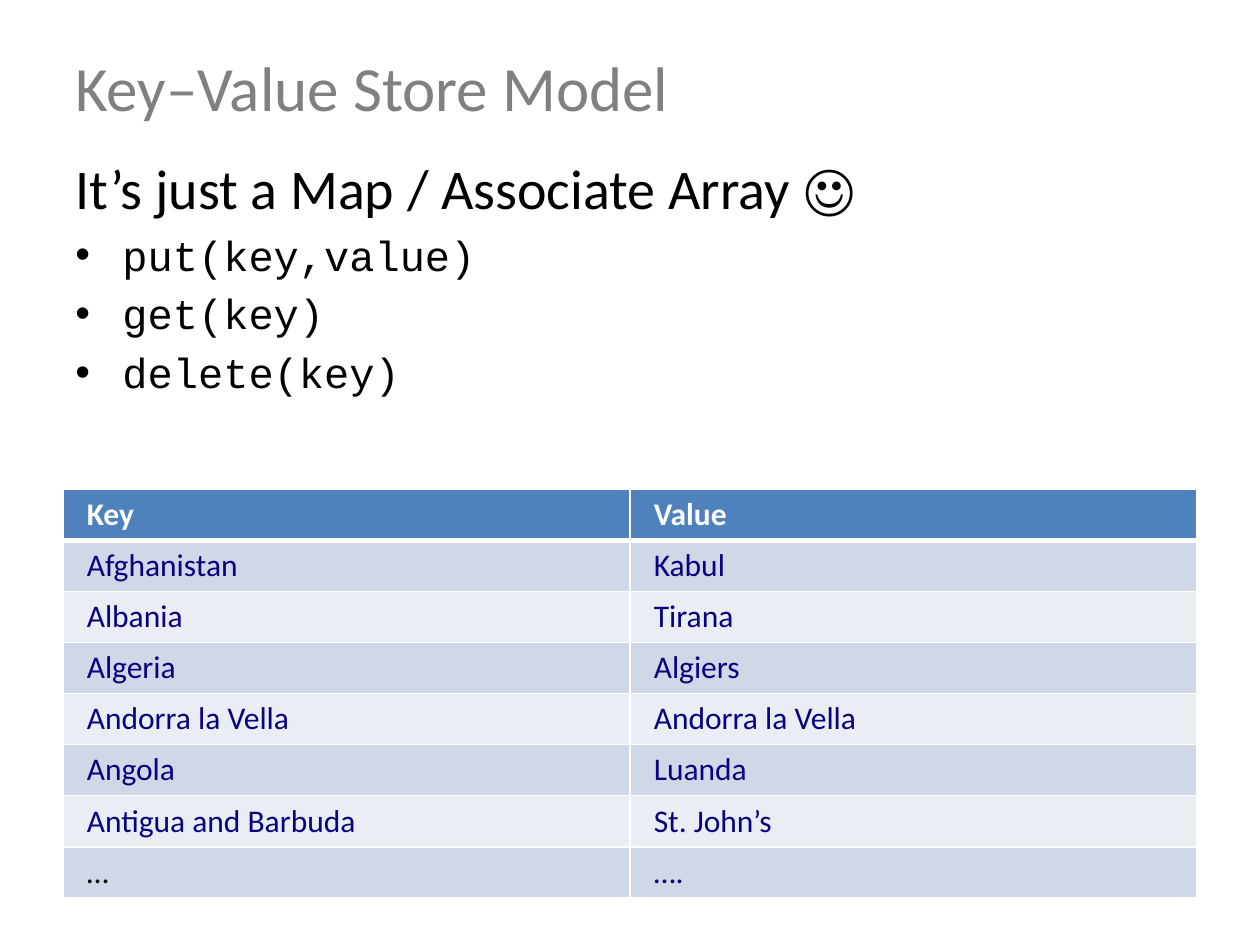
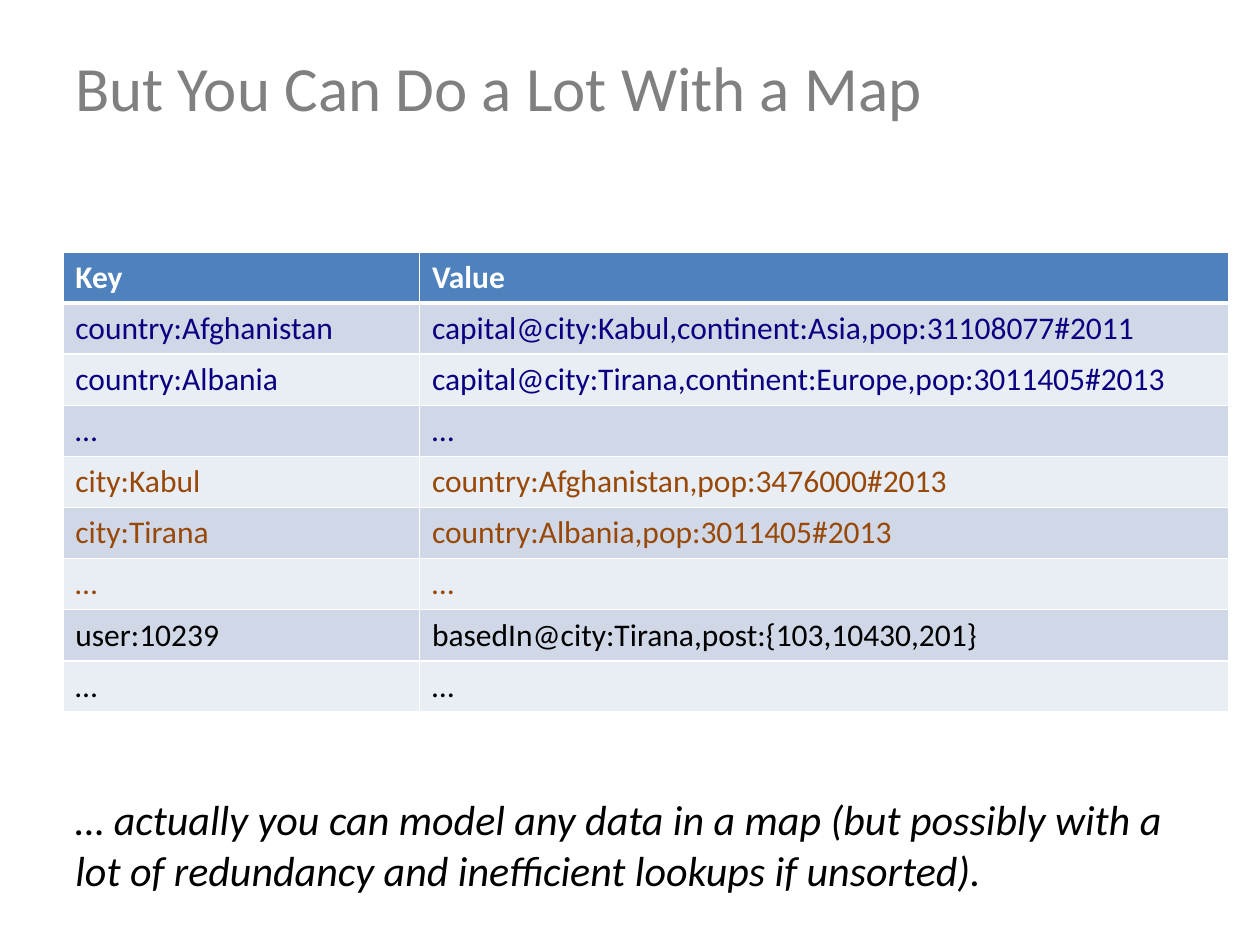
from lxml import etree
from pptx import Presentation
from pptx.dml.color import RGBColor
from pptx.enum.text import MSO_ANCHOR as Anchor
from pptx.oxml.ns import qn
from pptx.util import Cm, Pt

# Content
COLORS = {"title": "808080", "text": "000000", "white": "FFFFFF", "header": "4F81BD",
          "odd": "D0D8E8", "even": "E9EDF4", "blue": "0B0080", "brown": "984807"}
FONT, CODE_FONT = "Calibri", "Courier New"

HEADER = ("Key", "Value")
CAPITALS = [  # key, value, key colour, value colour
    ("Afghanistan", "Kabul", "blue", "blue"),
    ("Albania", "Tirana", "blue", "blue"),
    ("Algeria", "Algiers", "blue", "blue"),
    ("Andorra la Vella", "Andorra la Vella", "blue", "blue"),
    ("Angola", "Luanda", "blue", "blue"),
    ("Antigua and Barbuda", "St. John’s", "blue", "blue"),
    ("…", "….", "text", "blue"),
]
RECORDS = [
    ("country:Afghanistan", "capital@city:Kabul,continent:Asia,pop:31108077#2011", "blue", "blue"),
    ("country:Albania", "capital@city:Tirana,continent:Europe,pop:3011405#2013", "blue", "blue"),
    ("…", "…", "blue", "blue"),
    ("city:Kabul", "country:Afghanistan,pop:3476000#2013", "brown", "brown"),
    ("city:Tirana", "country:Albania,pop:3011405#2013", "brown", "brown"),
    ("…", "…", "brown", "brown"),
    ("user:10239", "basedIn@city:Tirana,post:{103,10430,201}", "text", "text"),
    ("…", "…", "text", "text"),
]
LEAD = "It’s just a Map / Associate Array ☺"
OPERATIONS = ["put(key,value)", "get(key)", "delete(key)"]
REMARK = ("… actually you can model any data in a map (but possibly with a lot of "
          "redundancy and inefficient lookups if unsorted).")

# Shared measures
LEFT, ROW_HEIGHT, INDENT = Cm(1.27), Cm(1.03), Cm(0.95)


def rgb(name):
    return RGBColor.from_string(COLORS[name])


def style(p, size, color="text", font=FONT, bold=False, italic=False):
    for r in p.runs:
        f = r.font
        f.name, f.size, f.bold, f.italic = font, Pt(size), bold, italic
        f.color.rgb = rgb(color)


def add_text(s, top, width, height, lines):
    sp = s.shapes.add_textbox(LEFT, top, width, height)
    tf = sp.text_frame
    tf.word_wrap = True
    tf.text = "\n".join(lines)
    return tf


def add_slide(prs, title):
    s = prs.slides.add_slide(prs.slide_layouts[6])
    tf = add_text(s, Cm(0.76), Cm(22.86), Cm(1.98), [title])
    tf.vertical_anchor = Anchor.MIDDLE
    style(tf.paragraphs[0], 36, "title")
    return s


def set_list_format(p, bullet):
    """Space before a paragraph relative to its line, with an optional bullet."""
    pPr = p._p.get_or_add_pPr()
    before = etree.SubElement(pPr, qn("a:spcBef"))
    etree.SubElement(before, qn("a:spcPct"), val="20000")
    if bullet:
        pPr.set("marL", str(INDENT))
        pPr.set("indent", str(-INDENT))
        etree.SubElement(pPr, qn("a:buFont"), typeface="Arial")
        etree.SubElement(pPr, qn("a:buChar"), char="•")


def set_borders(cell, top, bottom):
    tcPr = cell._tc.get_or_add_tcPr()
    widths = {"a:lnL": 1, "a:lnR": 1, "a:lnT": top, "a:lnB": bottom}
    for i, (tag, width) in enumerate(widths.items()):
        ln = etree.Element(qn(tag), w=str(Pt(width)))
        fill = etree.SubElement(ln, qn("a:solidFill"))
        etree.SubElement(fill, qn("a:srgbClr"), val=COLORS["white"])
        tcPr.insert(i, ln)


def add_map_table(s, top, widths, records, margin):
    rows = [(*HEADER, "white", "white")] + records
    frame = s.shapes.add_table(len(rows), 2, LEFT, top, sum(widths), ROW_HEIGHT * len(rows))
    table = frame.table
    for column, width in zip(table.columns, widths):
        column.width = width
    for i, row in enumerate(rows):
        table.rows[i].height = ROW_HEIGHT
        band = "header" if i == 0 else "odd" if i % 2 else "even"
        for j in range(2):
            cell = table.cell(i, j)
            cell.text_frame.text = row[j]
            style(cell.text_frame.paragraphs[0], 18, row[j + 2], bold=i == 0)
            cell.margin_left = cell.margin_right = margin
            cell.vertical_anchor = Anchor.MIDDLE if i else Anchor.TOP
            cell.fill.solid()
            cell.fill.fore_color.rgb = rgb(band)
            # A thick rule parts the header from the records
            set_borders(cell, top=3 if i == 1 else 1, bottom=3 if i == 0 else 1)


def main():
    prs = Presentation()
    prs.slide_width, prs.slide_height = Cm(25.4), Cm(19.05)

    # Key-value model: operations above a table of capitals
    s = add_slide(prs, "Key–Value Store Model")
    add_map_table(s, Cm(9.86), [Cm(11.43)] * 2, CAPITALS, Cm(0.48))
    tf = add_text(s, Cm(2.97), Cm(22.86), Cm(13.54), [LEAD] + OPERATIONS)
    for i, p in enumerate(tf.paragraphs):
        set_list_format(p, bullet=i > 0)
        style(p, 24 if i else 32, font=CODE_FONT if i else FONT)

    # Richer records in the same kind of map
    s = add_slide(prs, "But You Can Do a Lot With a Map")
    add_map_table(s, Cm(5.08), [Cm(7.19), Cm(16.31)], RECORDS, Cm(0.25))
    tf = add_text(s, Cm(15.88), Cm(23.5), Cm(2.31), [REMARK])
    style(tf.paragraphs[0], 24, italic=True)

    prs.save("out.pptx")


if __name__ == "__main__":
    main()
